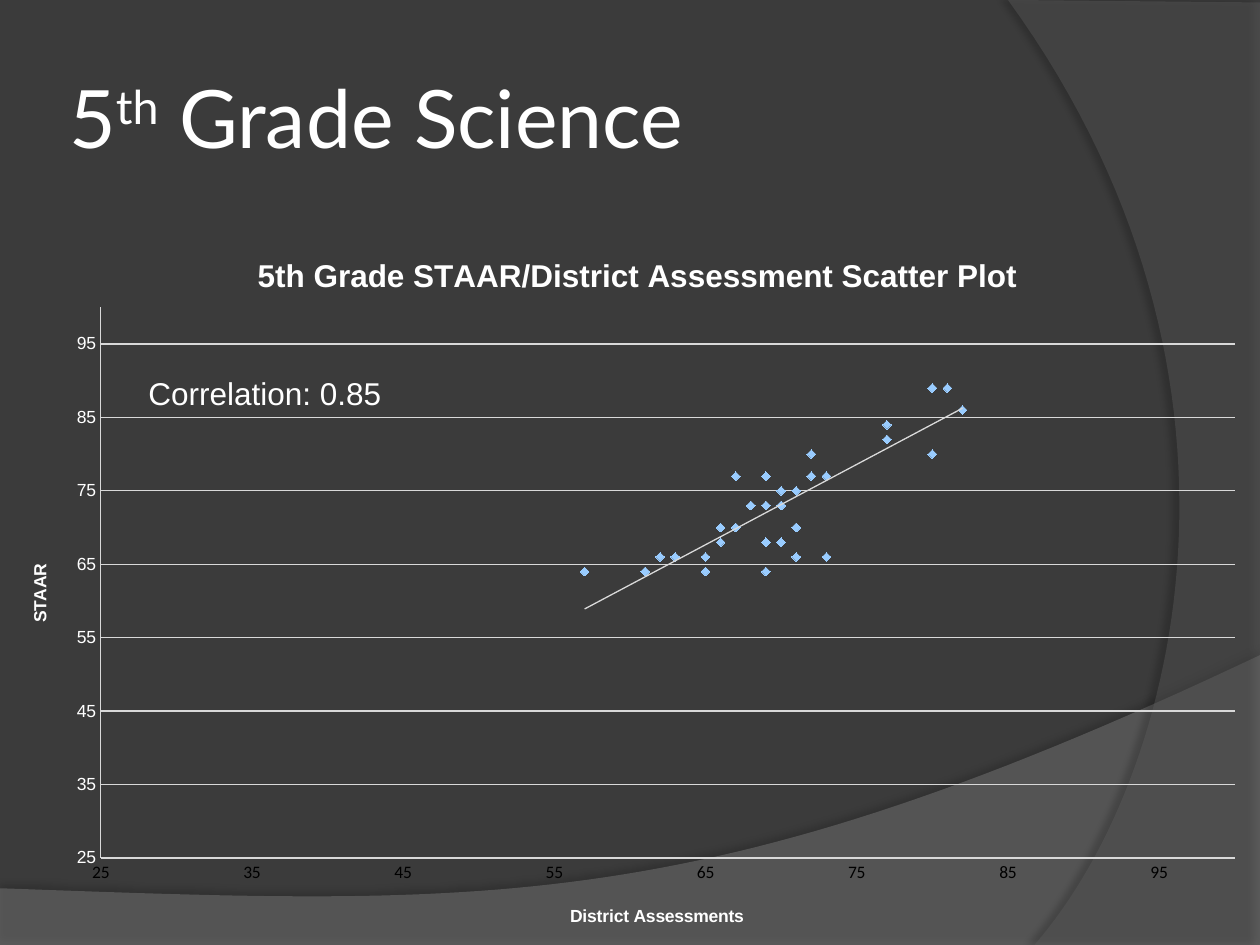
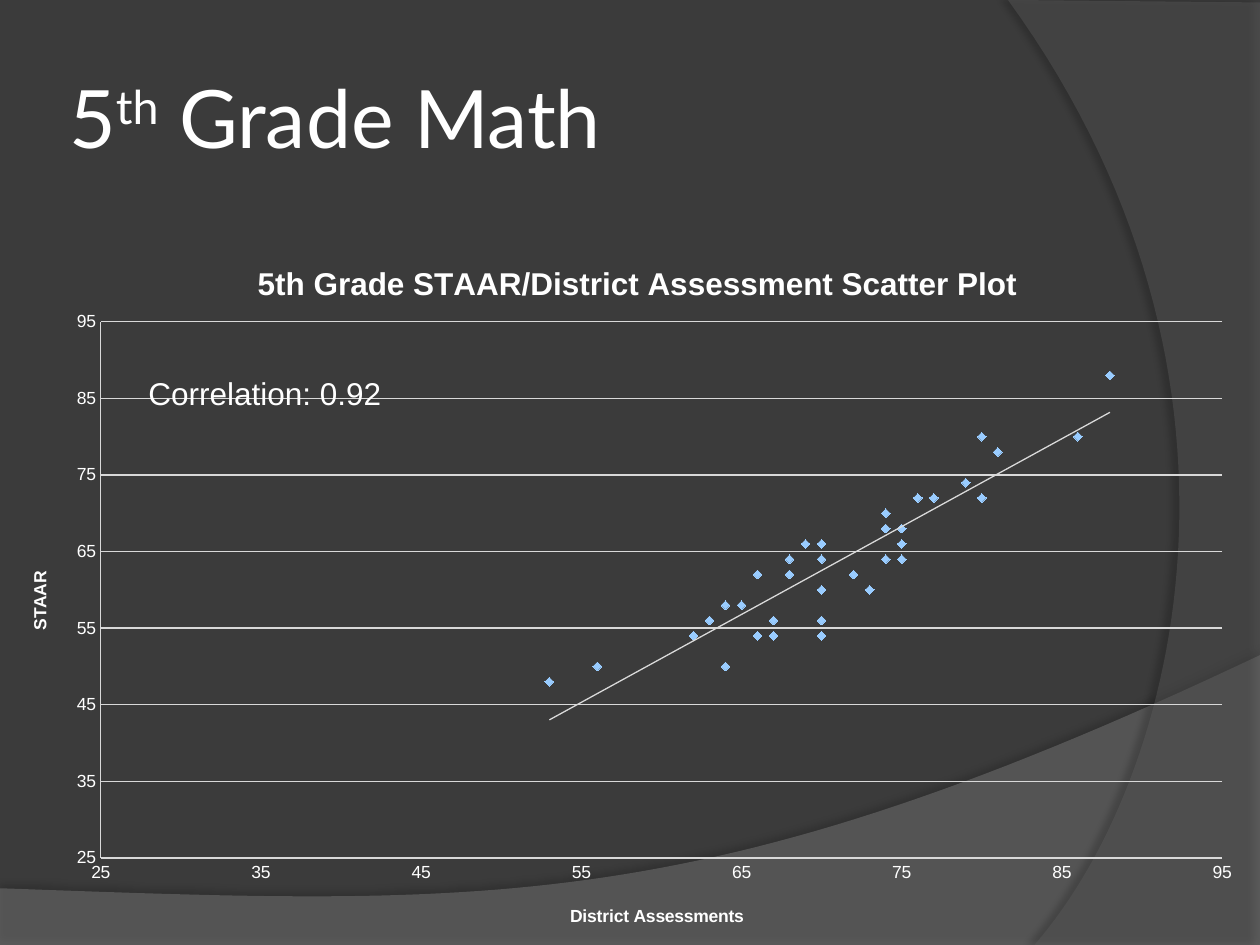
"""Build two slides that plot STAAR scores against district assessments."""
from dataclasses import dataclass

from lxml.etree import SubElement
from pptx import Presentation
from pptx.chart.data import XyChartData
from pptx.dml.color import RGBColor as Rgb
from pptx.enum.chart import XL_AXIS_CROSSES as Crosses
from pptx.enum.chart import XL_CHART_TYPE as ChartType
from pptx.enum.chart import XL_MARKER_STYLE as Marker
from pptx.enum.chart import XL_TICK_MARK as Tick
from pptx.enum.text import MSO_ANCHOR as Anchor
from pptx.oxml import parse_xml
from pptx.oxml.ns import nsdecls, qn
from pptx.util import Pt

PX = 9144
WIDTH, HEIGHT = 1000, 750


@dataclass(frozen=True)
class Theme:
    ground: str = "3B3B3B"
    wave: str = "7F7F7F"
    arc: str = "5E5E5E"
    shade: str = "000000"
    ink: str = "FFFFFF"
    dark_ink: str = "000000"
    grid: str = "D9D9D9"
    dot: str = "99CCFF"
    heading_font: str = "Lato"
    body_font: str = "Arial"
    label_font: str = "Calibri"
    heading_size: int = 46
    body_size: int = 18
    label_size: int = 10
    hairline: float = 0.75
    dot_size: int = 5


THEME = Theme()


def style(font, face=THEME.body_font, size=THEME.body_size, color=THEME.ink, bold=False):
    font.name, font.size, font.bold = face, Pt(size), bold
    font.color.rgb = Rgb.from_string(color)


def write(paragraph, text, raised=0, **look):
    run = paragraph.add_run()
    run.text = text
    style(run.font, **look)
    if raised:
        run._r.get_or_add_rPr().set("baseline", str(raised * 1000))


def curve(start, first_pull, second_pull, end, steps=60):
    weights = [((1 - t) ** 3, 3 * t * (1 - t) ** 2, 3 * t * t * (1 - t), t ** 3)
               for t in (step / steps for step in range(1, steps + 1))]
    anchors = (start, first_pull, second_pull, end)
    return [tuple(sum(w * point[axis] for w, point in zip(row, anchors)) for axis in (0, 1))
            for row in weights]


def manual_layout(x, y, w=None, h=None):
    sizes = {"xMode": "edge", "yMode": "edge", "x": x, "y": y}
    if w:
        sizes = {"layoutTarget": "inner", **sizes, "w": w, "h": h}
    layout = parse_xml(f"<c:layout {nsdecls('c')}><c:manualLayout/></c:layout>")
    for tag, value in sizes.items():
        SubElement(layout[0], qn(f"c:{tag}"), val=str(value))
    return layout


def drop_layout(parent):
    for layout in parent.findall(qn("c:layout")):
        parent.remove(layout)


class Deck:
    def __init__(self, theme):
        self.theme = theme
        self.prs = Presentation()
        self.prs.slide_width, self.prs.slide_height = WIDTH * PX, HEIGHT * PX
        self.slide = None

    def new_slide(self):
        self.slide = self.prs.slides.add_slide(self.prs.slide_layouts[6])
        ground = self.slide.background.fill
        ground.solid()
        ground.fore_color.rgb = Rgb.from_string(self.theme.ground)
        self.band([(0, 705), (0, HEIGHT), (WIDTH, HEIGHT), (WIDTH, 520)],
                  [(559, 729), (391, 719), (0, 705)], self.theme.wave, 45, (35, 4, 3.5, 270))
        self.band([(WIDTH, 2), (WIDTH, HEIGHT), (821, HEIGHT)],
                  [(935, 619), (1018, 300), (800, 0)], self.theme.arc, 40, (45, 4, 4, 180))

    def band(self, corners, bend, color, opacity, shadow):
        outline = corners + curve(corners[-1], *bend)
        points = [(x * PX, y * PX) for x, y in outline]
        builder = self.slide.shapes.build_freeform(*points[0], scale=1)
        builder.add_line_segments(points[1:], close=True)
        band = builder.convert_to_shape()
        band.line.fill.background()
        band.fill.solid()
        band.fill.fore_color.rgb = Rgb.from_string(color)
        tint = band._element.spPr.find(f"{qn('a:solidFill')}/{qn('a:srgbClr')}")
        SubElement(tint, qn("a:alpha"), val=str(opacity * 1000))
        band.shadow.inherit = False
        strength, blur, distance, angle = shadow
        cast = SubElement(band._element.spPr.find(qn("a:effectLst")), qn("a:outerShdw"),
                          blurRad=str(Pt(blur)), dist=str(Pt(distance)),
                          dir=str(angle * 60000), algn="ctr", rotWithShape="0")
        shade = SubElement(cast, qn("a:srgbClr"), val=self.theme.shade)
        SubElement(shade, qn("a:alpha"), val=str(strength * 1000))

    def text(self, box, pieces, inset=(10, 5), anchor=Anchor.TOP, **look):
        frame = self.slide.shapes.add_textbox(*(side * PX for side in box)).text_frame
        frame.word_wrap = True
        frame.vertical_anchor = anchor
        frame.margin_left = frame.margin_right = inset[0] * PX
        frame.margin_top = frame.margin_bottom = inset[1] * PX
        for piece, raised in pieces:
            write(frame.paragraphs[0], piece, raised, **look)

    def heading(self, subject):
        self.text((50, 30, 817, 125), [("5", 0), ("th", 30), (f" Grade {subject}", 0)],
                  inset=(5, 5), anchor=Anchor.MIDDLE,
                  face=self.theme.heading_font, size=self.theme.heading_size)

    def caption(self, title, text, spot, size):
        write(title.text_frame.paragraphs[0], text, size=size, bold=True)
        drop_layout(title._element)
        title._element.find(qn("c:tx")).addnext(manual_layout(*spot))

    def axis(self, axis, name, spot, top, **look):
        axis.minimum_scale, axis.maximum_scale, axis.major_unit = 25, top, 10
        axis.major_tick_mark = axis.minor_tick_mark = Tick.NONE
        axis.crosses = Crosses.MINIMUM
        axis.has_major_gridlines = False
        self.hairline(axis.format.line)
        style(axis.tick_labels.font, size=self.theme.label_size, **look)
        self.caption(axis.axis_title, name, spot, self.theme.label_size)

    def hairline(self, line):
        line.color.rgb = Rgb.from_string(self.theme.grid)
        line.width = Pt(self.theme.hairline)

    def scatter(self, district, staar, top, plot_box, title_top, staar_top, **label_look):
        data = XyChartData()
        schools = data.add_series("Series 1")
        for point in zip(district, staar):
            schools.add_data_point(*point)
        chart = self.slide.shapes.add_chart(
            ChartType.XY_SCATTER, 0, 175 * PX, WIDTH * PX, 575 * PX, data).chart
        style(chart.font, size=self.theme.label_size)
        chart.has_legend = False
        chart.has_title = True
        self.caption(chart.chart_title, "5th Grade STAAR/District Assessment Scatter Plot",
                     (0.2, title_top), self.theme.body_size)
        self.axis(chart.category_axis, "District Assessments", (0.45, 0.94), top, **label_look)
        self.axis(chart.value_axis, "STAAR", (0.02, staar_top), top)
        turned = chart.value_axis.axis_title.text_frame._txBody.find(qn("a:bodyPr"))
        turned.set("rot", "-5400000")
        turned.set("vert", "horz")
        chart.value_axis.has_major_gridlines = True
        self.hairline(chart.value_axis.major_gridlines.format.line)
        plot_area = chart._chartSpace.find(f".//{qn('c:plotArea')}")
        drop_layout(plot_area)
        plot_area.insert(0, manual_layout(*plot_box))
        self.dots(chart.plots[0])

    def dots(self, plot):
        plot.vary_by_categories = False
        series = plot.series[0]
        series.format.line.fill.background()
        series.marker.style, series.marker.size = Marker.DIAMOND, self.theme.dot_size
        for part in (series.marker.format.fill, series.marker.format.line.fill):
            part.solid()
            part.fore_color.rgb = Rgb.from_string(self.theme.dot)
        trend = parse_xml(
            f'<c:trendline {nsdecls("c", "a")}><c:spPr><a:ln w="{Pt(self.theme.hairline)}">'
            f'<a:solidFill><a:srgbClr val="{self.theme.grid}"/></a:solidFill></a:ln></c:spPr>'
            '<c:trendlineType val="linear"/><c:dispRSqr val="0"/><c:dispEq val="0"/>'
            '</c:trendline>')
        series._element.find(qn("c:xVal")).addprevious(trend)


SCIENCE = dict(
    district=[71, 68, 65, 70, 69, 61, 72, 71, 65, 70, 66, 72, 63, 77, 71, 69, 67, 71,
              80, 68, 61, 80, 66, 69, 77, 80, 81, 57, 69, 70, 73, 67, 82, 73, 62, 70],
    staar=[75, 73, 66, 73, 64, 64, 80, 66, 64, 75, 68, 77, 66, 84, 70, 68, 77, 70,
           89, 73, 64, 80, 70, 73, 82, 89, 89, 64, 77, 73, 66, 70, 86, 77, 66, 68],
    top=100, plot_box=(0.08, 0.12, 0.9, 0.76), title_top=0.04, staar_top=0.47,
    face=THEME.label_font, color=THEME.dark_ink)
MATH = dict(
    district=[70, 68, 66, 68, 70, 64, 77, 62, 65, 67, 72, 79, 70, 81, 64, 75, 75, 75,
              88, 74, 56, 80, 66, 70, 74, 86, 80, 69, 74, 63, 67, 70, 74, 76, 53, 73],
    staar=[66, 62, 54, 64, 56, 50, 72, 54, 58, 56, 62, 74, 54, 78, 58, 68, 64, 66,
           88, 64, 50, 72, 62, 60, 68, 80, 80, 66, 68, 56, 54, 64, 70, 72, 48, 60],
    top=95, plot_box=(0.08, 0.14, 0.89, 0.74), title_top=0.05, staar_top=0.48)


def main():
    deck = Deck(THEME)
    for subject, scores, correlation in (("Science", SCIENCE, "0.85"), ("Math", MATH, "0.92")):
        deck.new_slide()
        deck.heading(subject)
        deck.scatter(**scores)
        deck.text((108, 292, 225, 40), [(f"Correlation: {correlation}", 0)])
    deck.prs.save("out.pptx")


if __name__ == "__main__":
    main()
